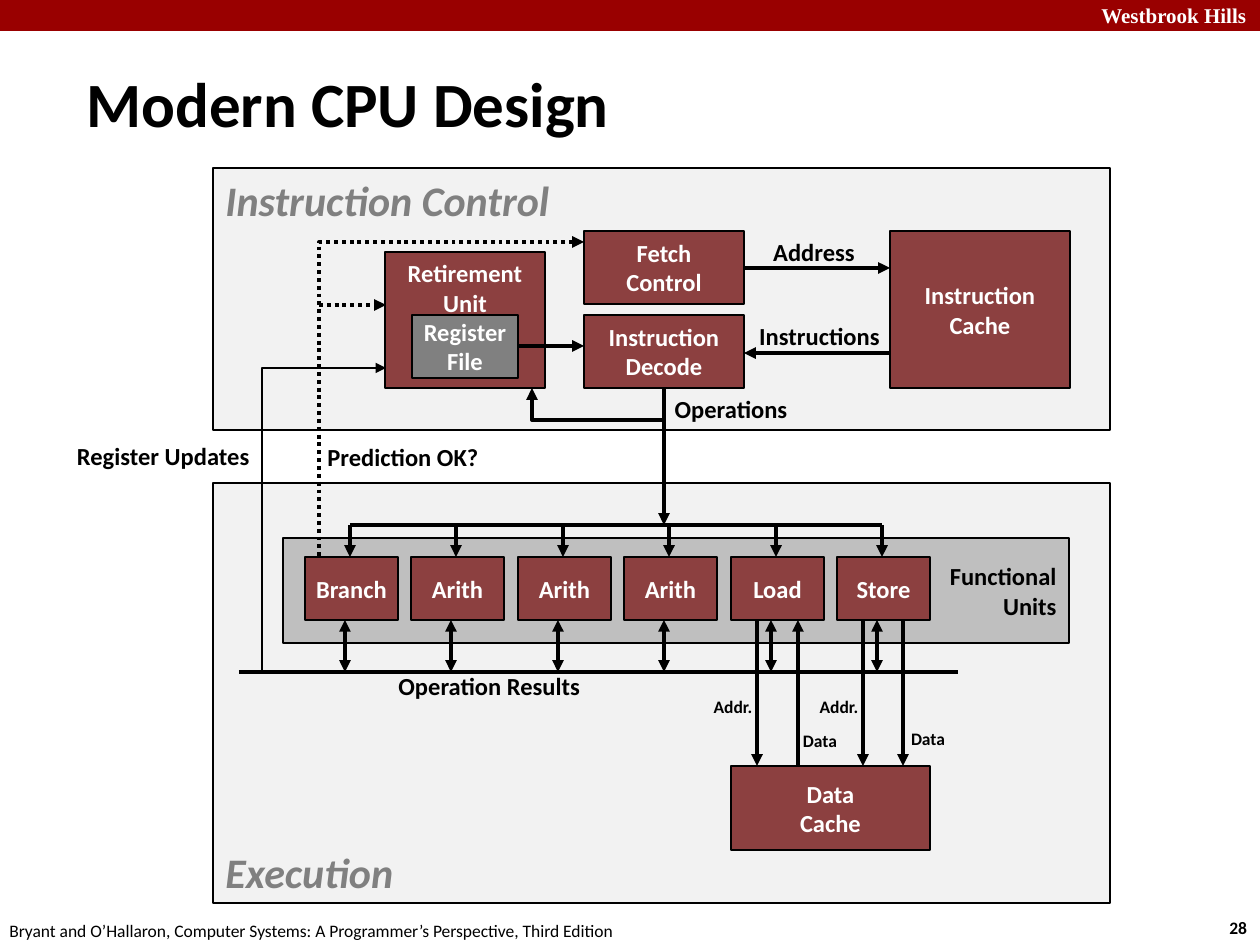
from lxml import etree
from pptx import Presentation
from pptx.dml.color import RGBColor
from pptx.enum.dml import MSO_LINE
from pptx.enum.shapes import MSO_CONNECTOR, MSO_SHAPE
from pptx.enum.text import MSO_ANCHOR, PP_ALIGN
from pptx.oxml.ns import qn
from pptx.util import Emu, Pt

SCALE = 914400 / 126
LEFT, CENTER, RIGHT = PP_ALIGN.LEFT, PP_ALIGN.CENTER, PP_ALIGN.RIGHT
TOP, MIDDLE, BOTTOM = MSO_ANCHOR.TOP, MSO_ANCHOR.MIDDLE, MSO_ANCHOR.BOTTOM
RECT, STRAIGHT, DOTS = MSO_SHAPE.RECTANGLE, MSO_CONNECTOR.STRAIGHT, MSO_LINE.ROUND_DOT
BLACK = RGBColor(0x00, 0x00, 0x00)
WHITE = RGBColor(0xFF, 0xFF, 0xFF)
RED = RGBColor(0x99, 0x00, 0x00)
BRICK = RGBColor(0x8C, 0x40, 0x40)
PALE = RGBColor(0xF2, 0xF2, 0xF2)
SILVER = RGBColor(0xBF, 0xBF, 0xBF)
GRAY = RGBColor(0x80, 0x80, 0x80)


def px(n):
    return Emu(round(n * SCALE))


def write(shape, text, size=14, color=BLACK, align=LEFT, anchor=TOP,
          bold=True, italic=False, face="Calibri"):
    frame = shape.text_frame
    frame.text = text
    frame.word_wrap = False
    frame.vertical_anchor = anchor
    for para in frame.paragraphs:
        para.alignment = align
        for run in para.runs:
            font = run.font
            font.name, font.size, font.color.rgb = face, Pt(size), color
            font.bold, font.italic = bold, italic


def stroke(shape, width, head, tail, dotted):
    """Style a line or open path and set its arrowheads."""
    line = shape.line
    line.color.rgb = BLACK
    line.width = Pt(width)
    if dotted:
        line.dash_style = DOTS
    props = shape._element.spPr
    edge = props.find(qn("a:ln"))
    for tag, shown in (("a:headEnd", head), ("a:tailEnd", tail)):
        if shown:
            etree.SubElement(edge, qn(tag), type="triangle")
    etree.SubElement(props, qn("a:effectLst"))


class Area:
    """A region of the slide; its parts are placed from its top left corner."""

    def __init__(self, slide, box):
        self.shapes = slide.shapes
        self.x, self.y, self.w, self.h = box

    def place(self, x, y, w, h):
        return px(self.x + x), px(self.y + y), px(w), px(h)

    def block(self, box, text="", fill=BRICK, edge=0.75, color=WHITE,
              align=CENTER, anchor=MIDDLE, **style):
        shape = self.shapes.add_shape(RECT, *self.place(*box))
        shape.shadow.inherit = False
        shape.fill.solid()
        shape.fill.fore_color.rgb = fill
        if edge:
            shape.line.color.rgb = BLACK
            shape.line.width = Pt(edge)
        else:
            shape.line.fill.background()
        if text:
            write(shape, text, color=color, align=align, anchor=anchor, **style)

    def panel(self, text, anchor):
        self.block((0, 0, self.w, self.h), text, PALE, 1.5, GRAY, LEFT, anchor,
                   size=24, italic=True)

    def label(self, box, text, **style):
        write(self.shapes.add_textbox(*self.place(*box)), text, **style)

    def line(self, x1, y1, x2, y2, head=False, tail=True, dotted=False):
        start, end = self.place(x1, y1, 0, 0)[:2], self.place(x2, y2, 0, 0)[:2]
        link = self.shapes.add_connector(STRAIGHT, *start, *end)
        stroke(link, 2.25, head, tail, dotted)

    def bend(self, points, width=2.25, head=False, tail=False, dotted=False):
        pts = [(self.x + x, self.y + y) for x, y in points]
        form = self.shapes.build_freeform(*pts[0], scale=SCALE)
        form.add_line_segments(pts[1:], close=False)
        shape = form.convert_to_shape()
        shape.fill.background()
        stroke(shape, width, head, tail, dotted)


def frame(slide, box):
    """Place the top bar, title and footer."""
    page = Area(slide, box)
    page.block((0, 0, page.w, 31), fill=RED, edge=0)
    page.label((1089, -4, 180, 38), "Westbrook Hills", size=12, color=WHITE,
               face="Times New Roman")
    page.label((1217, 911, 47, 34), "28", size=10)
    page.label((-3, 914, 640, 34), "Bryant and O’Hallaron, Computer Systems: "
               "A Programmer’s Perspective, Third Edition", size=10, bold=False)
    page.label((74, 63, 808, 79), "Modern CPU Design", size=36, anchor=MIDDLE)


def execute(slide, box):
    area = Area(slide, box)
    area.panel("Execution", BOTTOM)
    area.block((70, 55, 786, 105), "Functional\nUnits", SILVER, color=BLACK,
               align=RIGHT)
    area.line(137, 42, 669, 42, tail=False)
    area.line(26, 189, 745, 189, tail=False)
    units = ["Branch", "Arith", "Arith", "Arith", "Load", "Store"]
    for i, name in enumerate(units):
        step = round(i * 106.4)
        area.block((92 + step, 74, 93, 63), name)
        area.line(137 + step, 42, 137 + step, 74)
        area.line(132 + step, 137, 132 + step, 189, head=True)
    area.label((173, 182, 209, 43), "Operation Results")

    area.block((518, 283, 199, 84), "Data\nCache")
    for x in (544, 650, 690):
        area.line(x, 137, x, 283)
    area.line(585, 283, 585, 137)
    for x in (487, 593):
        area.label((x, 207, 66, 34), "Addr.", size=10, align=CENTER)
    for x, y in ((577, 241), (685, 239)):
        area.label((x, y, 60, 34), "Data", size=10, align=CENTER)


def control(slide, box):
    area = Area(slide, box)
    area.panel("Instruction Control", TOP)
    area.block((371, 63, 160, 73), "Fetch\nControl")
    area.block((371, 147, 160, 73), "Instruction\nDecode")
    area.block((677, 63, 180, 157), "Instruction\nCache")
    area.block((172, 84, 160, 136), "Retirement\nUnit", anchor=TOP)
    area.block((199, 147, 106, 63), "Register\nFile", GRAY)
    area.line(531, 100, 677, 100)
    area.line(677, 185, 531, 185)
    area.line(305, 178, 371, 178)
    area.bend([(451, 252), (319, 252), (319, 220)], tail=True)
    area.label((547, 63, 108, 43), "Address", align=CENTER)
    area.label((533, 147, 147, 43), "Instructions", align=CENTER)
    area.label((448, 220, 140, 43), "Operations", align=CENTER)


def links(slide, box):
    """Join the two panels."""
    area = Area(slide, box)
    area.line(664, 388, 664, 525)
    area.bend([(584, 242), (319, 242), (319, 557)], head=True, dotted=True)
    area.line(319, 305, 386, 305, dotted=True)
    area.bend([(386, 368), (262, 368), (262, 672)], 1.5, head=True)
    area.label((315, 436, 178, 43), "Prediction OK?")
    area.label((63, 435, 199, 43), "Register Updates", align=RIGHT)


def main():
    deck = Presentation()
    deck.slide_width, deck.slide_height = px(1260), px(945)
    slide = deck.slides.add_slide(deck.slide_layouts[6])
    full = (0, 0, 1260, 945)
    frame(slide, full)
    execute(slide, (213, 483, 897, 420))
    control(slide, (213, 168, 897, 262))
    links(slide, full)
    deck.save("out.pptx")


if __name__ == "__main__":
    main()
